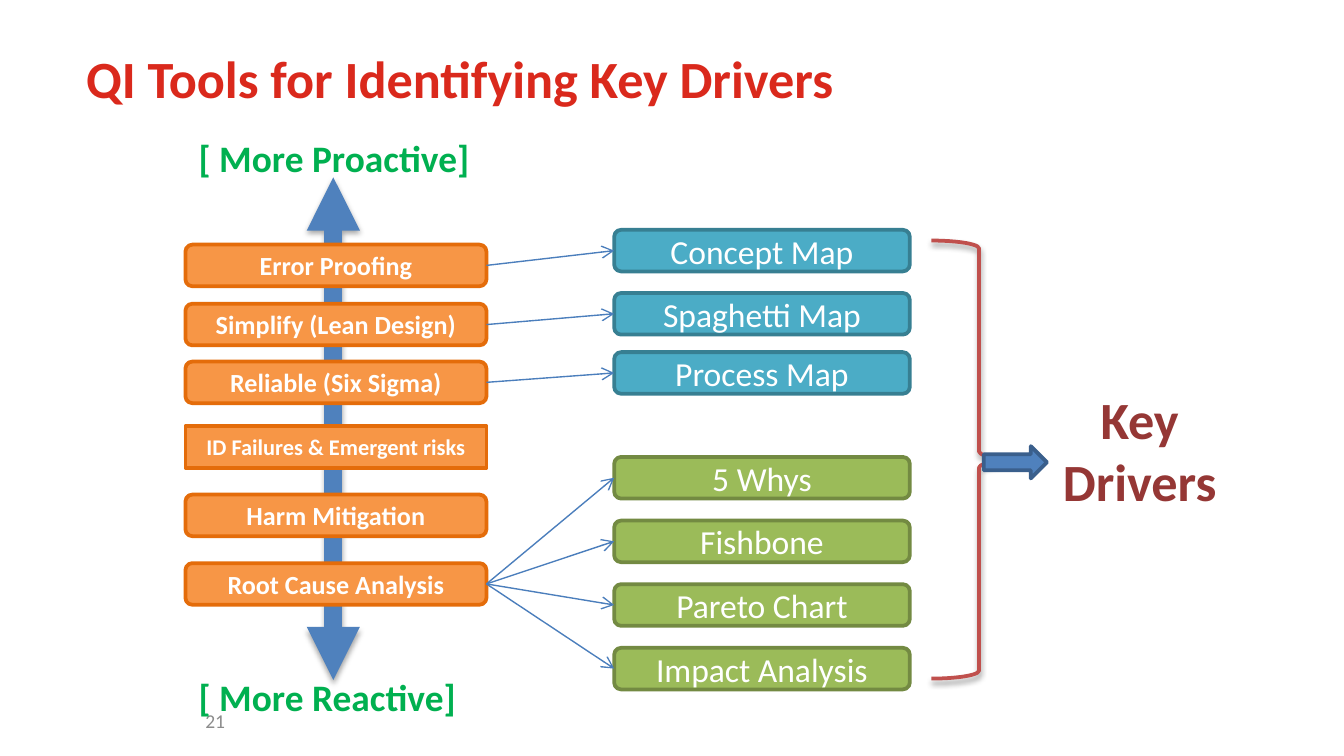
from lxml.etree import SubElement
from pptx import Presentation
from pptx.dml.color import RGBColor as Rgb
from pptx.enum.shapes import MSO_CONNECTOR as Conn, MSO_SHAPE as Kind
from pptx.enum.text import MSO_ANCHOR as Anchor, MSO_AUTO_SIZE as Fit, PP_ALIGN as Align
from pptx.oxml.ns import qn
from pptx.util import Inches, Pt

FONT = "Calibri"
HEX = {
    "title": "DA291C", "page": "8C8C8C", "ends": "00B050", "goal": "953735",
    "white": "FFFFFF", "axis": "4F81BD", "link": "4B7EBC", "edge": "3A5F8C",
    "brace": "C0504D", "step": "F79646", "step_edge": "E46C0A",
    "map": "4BACC6", "map_edge": "377F92", "tool": "9BBB59", "tool_edge": "738A42",
}

# Slide size, wide format
WIDE = Inches(10)
HIGH = WIDE * 9 // 16

# Grid: left edge and width of the two columns, and the common box height
STEP_COL = (1.38, 2.24)
TOOL_COL = (4.57, 2.2)
TALL = 0.31
MID = STEP_COL[0] + 1.1

# Name, row top, text size
STEPS = [
    ("Error Proofing", 1.82, 14),
    ("Simplify (Lean Design)", 2.26, 14),
    ("Reliable (Six Sigma)", 2.69, 14),
    ("ID Failures & Emergent risks", 3.17, 12),
    ("Harm Mitigation", 3.68, 14),
    ("Root Cause Analysis", 4.19, 14),
]
MAPS = [("Concept Map", 1.71), ("Spaghetti Map", 2.18), ("Process Map", 2.62)]
TOOLS = ["5 Whys", "Fishbone", "Pareto Chart", "Impact Analysis"]
TOOL_TOP, TOOL_END = 3.4, 4.82
TOOL_GAP = (TOOL_END - TOOL_TOP) / (len(TOOLS) - 1)


def color(name):
    return Rgb.from_string(HEX[name])


def write(frame, lines, size, ink, bold=False, align=Align.LEFT):
    for i, line in enumerate(lines):
        para = frame.paragraphs[0] if i == 0 else frame.add_paragraph()
        para.alignment = align
        run = para.add_run()
        run.text = line
        font = run.font
        font.name, font.size, font.bold = FONT, Pt(size), bold
        font.color.rgb = color(ink)


def add_label(slide, area, lines, size, ink, bold=True, align=Align.LEFT):
    label = slide.shapes.add_textbox(*map(Inches, area))
    frame = label.text_frame
    frame.word_wrap = False
    frame.auto_size = Fit.SHAPE_TO_FIT_TEXT
    write(frame, lines, size, ink, bold, align)


def add_page(slide, text):
    page = slide.shapes.add_textbox(*map(Inches, (1.43, 5.21, 2.33, 0.3)))
    frame = page.text_frame
    frame.word_wrap = True
    frame.vertical_anchor = Anchor.MIDDLE
    write(frame, [text], 10.5, "page")


def add_form(slide, kind, area, fill, edge):
    form = slide.shapes.add_shape(kind, *map(Inches, area))
    form.shadow.inherit = False
    if fill:
        form.fill.solid()
        form.fill.fore_color.rgb = color(fill)
    else:
        form.fill.background()
    form.line.color.rgb = color(edge)
    form.line.width = Pt(2)
    return form


def add_box(slide, col, top, text, size, fill, bold=False):
    area = (col[0], top, col[1], TALL)
    box = add_form(slide, Kind.ROUNDED_RECTANGLE, area, fill, fill + "_edge")
    frame = box.text_frame
    frame.word_wrap = True
    frame.vertical_anchor = Anchor.MIDDLE
    write(frame, [text], size, "white", bold, Align.CENTER)
    return box


def add_line(slide, ends, ink, width, **tips):
    line = slide.shapes.add_connector(Conn.STRAIGHT, *map(Inches, ends))
    line.line.color.rgb = color(ink)
    line.line.width = Pt(width)
    stroke = line.line._get_or_add_ln()
    for tag, kind in tips.items():
        SubElement(stroke, qn("a:" + tag), type=kind)
    SubElement(line._element.spPr, qn("a:effectLst"))
    return line


def add_link(slide, start, end):
    line = add_line(slide, (0, 0, 1, 1), "link", 0.75, tailEnd="arrow")
    line.begin_connect(start, 3)
    line.end_connect(end, 1)


def add_shade(shape, alpha):
    effects = shape._element.spPr.find(qn("a:effectLst"))
    shade = SubElement(effects, qn("a:outerShdw"), blurRad=str(Pt(3.1)),
                       dist=str(Pt(1.8)), dir="5400000", rotWithShape="0")
    ink = SubElement(shade, qn("a:srgbClr"), val="000000")
    SubElement(ink, qn("a:alpha"), val=str(alpha * 1000))


def add_title(slide, text):
    title = slide.shapes.title
    title.left, title.top, title.width, title.height = map(Inches, (0.54, 0.3, 9, 0.55))
    title.text_frame.vertical_anchor = Anchor.MIDDLE
    write(title.text_frame, [text], 28, "title", True)


def main():
    deck = Presentation()
    deck.slide_width, deck.slide_height = WIDE, HIGH
    slide = deck.slides.add_slide(deck.slide_layouts[5])

    # Title and page number
    add_title(slide, "QI Tools for Identifying Key Drivers")
    add_page(slide, "21")

    # Axis from proactive to reactive
    axis = add_line(slide, (MID, 1.32, MID, 5.06), "axis", 9.5,
                    headEnd="triangle", tailEnd="triangle")
    add_shade(axis, 35)
    add_label(slide, (1.38, 0.96, 2.24, 0.44), ["[ More Proactive]"], 20, "ends")
    add_label(slide, (1.38, 4.97, 2.13, 0.44), ["[ More Reactive]"], 20, "ends")

    # Boxes of both columns
    steps = [add_box(slide, STEP_COL, top, text, size, "step", True)
             for text, top, size in STEPS]
    steps[3].adjustments[0] = 0
    maps = [add_box(slide, TOOL_COL, top, text, 18, "map") for text, top in MAPS]
    tools = [add_box(slide, TOOL_COL, TOOL_TOP + i * TOOL_GAP, text, 18, "tool")
             for i, text in enumerate(TOOLS)]

    # Links: one step to each map, the last step to every tool
    for step, goal in zip(steps, maps):
        add_link(slide, step, goal)
    for tool in tools:
        add_link(slide, steps[-1], tool)

    # Brace and arrow to the key drivers
    brace = add_form(slide, Kind.RIGHT_BRACE, (6.93, 1.79, 0.71, 3.26), None, "brace")
    add_shade(brace, 38)
    add_label(slide, (7.8, 2.83, 1.36, 1.04), ["Key", "Drivers"], 28, "goal",
              align=Align.CENTER)
    add_form(slide, Kind.RIGHT_ARROW, (7.32, 3.32, 0.47, 0.24), "axis", "edge")

    deck.save("out.pptx")


if __name__ == "__main__":
    main()
